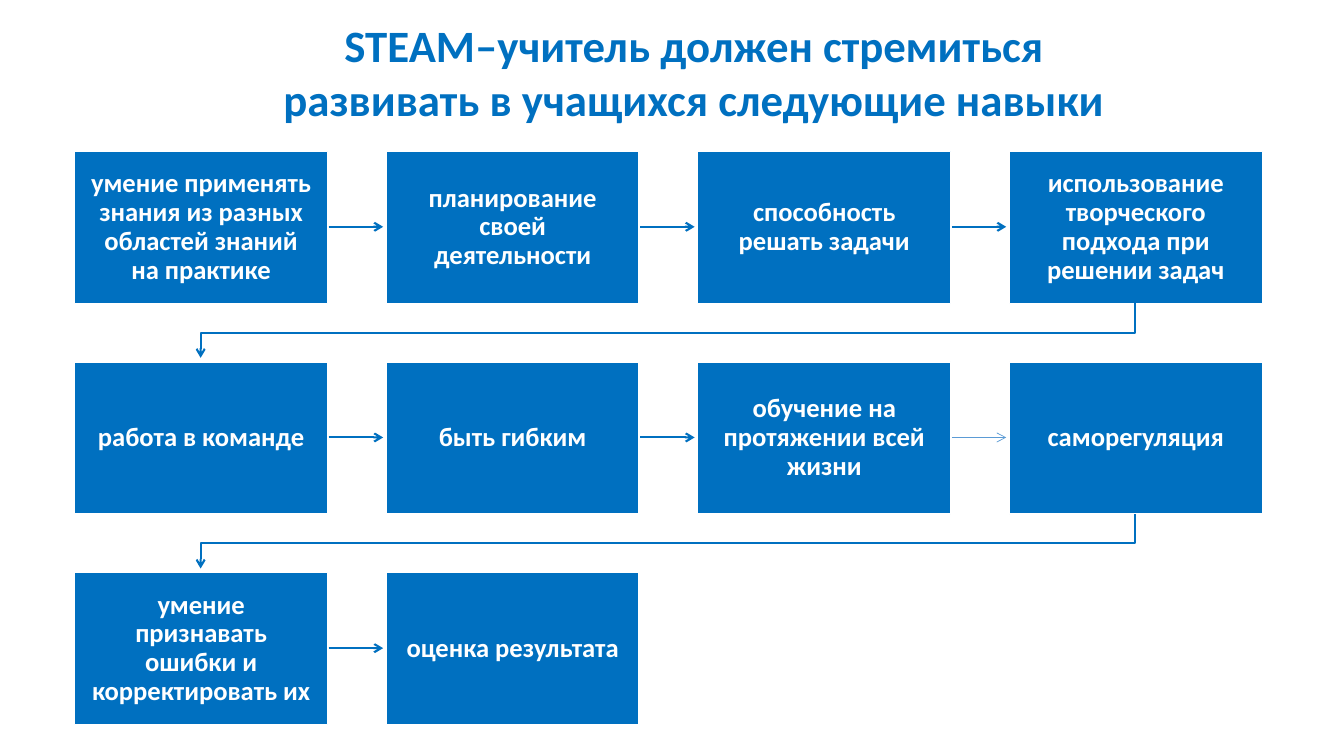
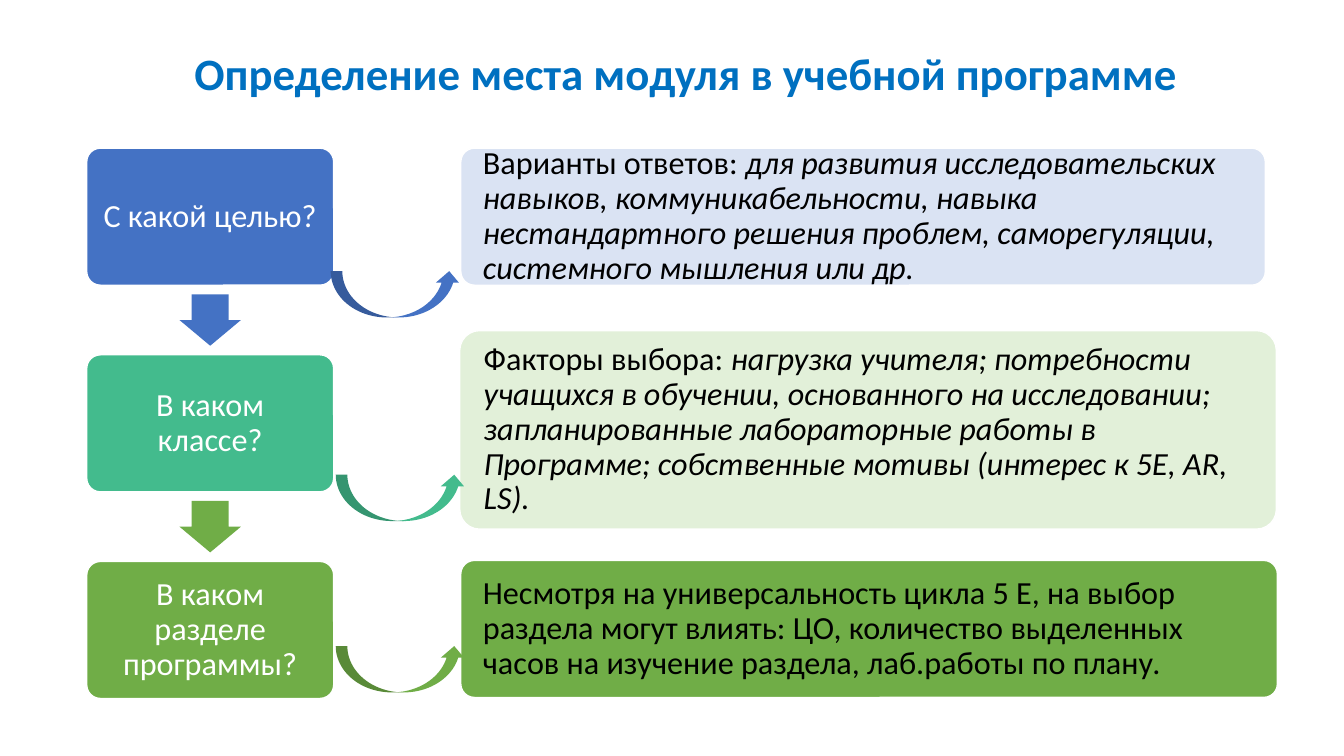
from dataclasses import dataclass

from lxml.etree import SubElement
from pptx import Presentation
from pptx.dml.color import RGBColor
from pptx.enum.shapes import MSO_CONNECTOR as Connector, MSO_SHAPE as Preset
from pptx.enum.text import MSO_ANCHOR as Anchor, PP_ALIGN as Align
from pptx.oxml.ns import qn
from pptx.util import Pt

PX = 9144


@dataclass(frozen=True)
class Theme:
    font: str = "Calibri"
    title_size: int = 32
    skill_size: int = 19
    module_size: int = 23
    accent: str = "0070C0"
    thin_line: str = "5B9BD5"
    white: str = "FFFFFF"
    black: str = "000000"
    blue: str = "4472C4"
    teal: str = "43BB8D"
    green: str = "70AD47"
    pale_blue: str = "DAE3F3"
    pale_green: str = "E2F0D9"


class Deck:
    def __init__(self, theme, width, height):
        self.theme = theme
        self.presentation = Presentation()
        self.presentation.slide_width = width * PX
        self.presentation.slide_height = height * PX
        self.slide = None

    def new_slide(self):
        self.slide = self.presentation.slides.add_slide(self.presentation.slide_layouts[6])

    def add_text(self, shape, runs, size, color, bold=False, align=Align.CENTER,
                 anchor=Anchor.MIDDLE, margins=(10, 5), spacing=0.9):
        frame = shape.text_frame
        frame.word_wrap = True
        frame.vertical_anchor = anchor
        frame.margin_left = frame.margin_right = margins[0] * PX
        frame.margin_top = frame.margin_bottom = margins[1] * PX
        paragraph = frame.paragraphs[0]
        paragraph.alignment = align
        paragraph.line_spacing = spacing
        for text, italic in runs:
            run = paragraph.add_run()
            run.text = text
            run.font.name = self.theme.font
            run.font.size = Pt(size)
            run.font.bold = bold
            run.font.italic = italic
            run.font.color.rgb = RGBColor.from_string(color)

    def title(self, text, box, **style):
        shape = self.slide.shapes.add_textbox(*(length * PX for length in box))
        self.add_text(shape, [(text, False)], self.theme.title_size, self.theme.accent,
                      bold=True, **style)

    def shape(self, preset, box, fill, adjustments=(), outlined=False):
        shape = self.slide.shapes.add_shape(preset, *(length * PX for length in box))
        shape.shadow.inherit = False
        for index, value in enumerate(adjustments):
            shape.adjustments[index] = value
        shape.fill.solid()
        shape.fill.fore_color.rgb = RGBColor.from_string(fill)
        if outlined:
            shape.line.color.rgb = RGBColor.from_string(self.theme.white)
            shape.line.width = Pt(1)
        else:
            shape.line.fill.background()
        return shape

    def skill(self, text, box):
        shape = self.shape(Preset.RECTANGLE, box, self.theme.accent, outlined=True)
        self.add_text(shape, [(text, False)], self.theme.skill_size, self.theme.white,
                      bold=True, margins=(15, 15))

    def card(self, runs, box, fill, color, **style):
        shape = self.shape(Preset.ROUNDED_RECTANGLE, box, fill, (0.1,), outlined=True)
        self.add_text(shape, runs, self.theme.module_size, color, **style)

    def style_arrow(self, shape, color, weight):
        shape.line.color.rgb = RGBColor.from_string(color)
        shape.line.width = Pt(weight)
        SubElement(shape.element.spPr.find(qn("a:ln")), qn("a:tailEnd"), type="arrow")

    def arrow(self, left, right, y, color, weight):
        connector = self.slide.shapes.add_connector(
            Connector.STRAIGHT, left * PX, y * PX, right * PX, y * PX)
        self.style_arrow(connector, color, weight)
        SubElement(connector.element.spPr, qn("a:effectLst"))

    def bent_arrow(self, points, color, weight):
        builder = self.slide.shapes.build_freeform(*points[0], scale=PX)
        builder.add_line_segments(points[1:], close=False)
        shape = builder.convert_to_shape()
        shape.fill.background()
        self.style_arrow(shape, color, weight)
        shape.shadow.inherit = False


def build_skills(deck):
    theme = deck.theme
    deck.new_slide()
    skills = [
        "умение применять знания из разных областей знаний на практике",
        "планирование своей деятельности",
        "способность решать задачи",
        "использование творческого подхода при решении задач",
        "работа в команде",
        "быть гибким",
        "обучение на протяжении всей жизни",
        "саморегуляция",
        "умение признавать ошибки и корректировать их",
        "оценка результата",
    ]
    columns, width, height = 4, 251, 151
    first_left, first_top, column_step, row_step = 74, 150, 309, 209
    thin_arrow = 6
    for index, text in enumerate(skills):
        row, column = divmod(index, columns)
        left, top = first_left + column * column_step, first_top + row * row_step
        right, bottom = left + width, top + height
        deck.skill(text, (left, top, width, height))
        if index == len(skills) - 1:
            continue
        if column < columns - 1:
            color, weight = (theme.thin_line, 0.5) if index == thin_arrow else (theme.accent, 1.5)
            deck.arrow(right + 1, right + 55, top + height // 2, color, weight)
        else:
            start, end = left + width // 2, first_left + width // 2
            turn = bottom + 29
            deck.bent_arrow([(start, bottom), (start, turn), (end, turn), (end, bottom + 54)],
                            theme.accent, 1.5)
    deck.title("STEAM–учитель должен стремиться развивать в учащихся следующие навыки",
               (239, 13, 899, 118), anchor=Anchor.TOP, spacing=1.0)


def build_module_place(deck):
    theme = deck.theme
    deck.new_slide()
    deck.title("Определение места модуля в учебной программе", (183, 27, 1150, 97),
               align=Align.LEFT)
    questions = [
        ("С какой целью?", theme.blue),
        ("В каком классе?", theme.teal),
        ("В каком разделе программы?", theme.green),
    ]
    left, first_top, width, height, step = 86, 147, 245, 136, 205
    arrow_width, arrow_height = 61, 51
    arrow_fills = [theme.blue, theme.green]
    for row, (text, fill) in enumerate(questions):
        top = first_top + row * step
        deck.card([(text, False)], (left, top, width, height), fill, theme.white,
                  margins=(10, 10))
        if row < len(arrow_fills):
            box = (left + (width - arrow_width) // 2,
                   top + height + (step - height - arrow_height) // 2,
                   arrow_width, arrow_height)
            deck.shape(Preset.DOWN_ARROW, box, arrow_fills[row], (0.6, 0.5))

    answers = [
        ((457, 147, 798, 136), theme.pale_blue, [
            ("Варианты ответов: ", False),
            ("для развития исследовательских навыков, коммуникабельности, навыка "
             "нестандартного решения проблем, саморегуляции, системного мышления или др.", True),
        ]),
        ((456, 328, 810, 197), theme.pale_green, [
            ("Факторы выбора: ", False),
            ("нагрузка учителя; потребности учащихся в обучении, основанного на исследовании; "
             "запланированные лабораторные работы в Программе; собственные мотивы "
             "(интерес к 5Е, AR, LS).", True),
        ]),
        ((457, 556, 810, 136), theme.green, [
            ("Несмотря на универсальность цикла 5 Е, на выбор раздела могут влиять: ЦО, "
             "количество выделенных часов на изучение раздела, лаб.работы по плану.", False),
        ]),
    ]
    for box, fill, runs in answers:
        deck.card(runs, box, fill, theme.black, align=Align.LEFT, margins=(18, 10))

    curve_places = [(328, 269), (333, 471), (333, 641)]
    for place, (_, fill) in zip(curve_places, questions):
        deck.shape(Preset.CURVED_UP_ARROW, (*place, 129, 46), fill)


def main():
    deck = Deck(Theme(), 1333, 750)
    build_skills(deck)
    build_module_place(deck)
    deck.presentation.save("out.pptx")


if __name__ == "__main__":
    main()
